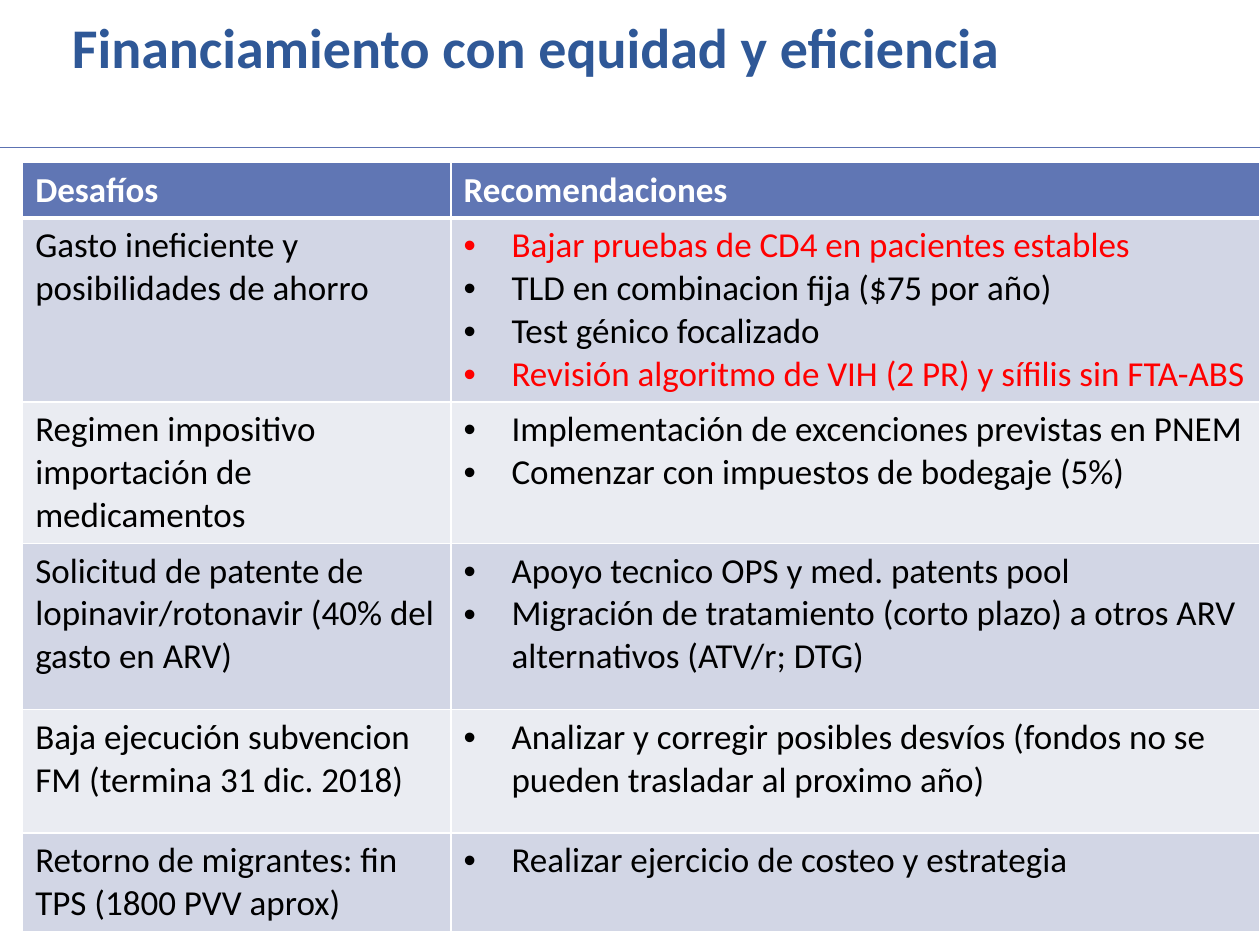
from lxml.etree import SubElement
from pptx import Presentation
from pptx.dml.color import RGBColor
from pptx.enum.shapes import MSO_CONNECTOR
from pptx.enum.text import MSO_ANCHOR, PP_ALIGN
from pptx.oxml.ns import qn
from pptx.util import Inches, Pt

COLORS = {
    "title": "2F5897", "rule": "5C72B2", "header": "6076B4",
    "band_dark": "D2D6E5", "band_light": "EAECF2",
    "white": "FFFFFF", "black": "000000", "red": "FF0000",
}
HEADERS = ["Desafíos", "Recomendaciones"]
# Each row: height, challenge, recommendations with their colour
ROWS = [
    (1.43, "Gasto ineficiente y posibilidades de ahorro", [
        ("Bajar pruebas de CD4 en pacientes estables", "red"),
        ("TLD en combinacion fija ($75 por año)", "black"),
        ("Test génico focalizado", "black"),
        ("Revisión algoritmo de VIH (2 PR) y sífilis sin FTA-ABS", "red")]),
    (1.1, "Regimen impositivo importación de medicamentos", [
        ("Implementación de excenciones previstas en PNEM", "black"),
        ("Comenzar con impuestos de bodegaje (5%)", "black")]),
    (1.32, "Solicitud de patente de lopinavir/rotonavir (40% del gasto en ARV)", [
        ("Apoyo tecnico OPS y med. patents pool", "black"),
        ("Migración de tratamiento (corto plazo) a otros ARV "
         "alternativos (ATV/r; DTG)", "black")]),
    (0.98, "Baja ejecución subvencion FM (termina 31 dic. 2018)", [
        ("Analizar y corregir posibles desvíos (fondos no se pueden "
         "trasladar al proximo año)", "black")]),
    (0.77, "Retorno de migrantes: fin TPS (1800 PVV aprox)", [
        ("Realizar ejercicio de costeo y estrategia", "black")]),
]


def add_text(paragraph, text, color, size=20, bold=False):
    run = paragraph.add_run()
    run.text = text
    run.font.name = "Calibri"
    run.font.size = Pt(size)
    run.font.bold = bold
    run.font.color.rgb = RGBColor.from_string(COLORS[color])


def format_cell(cell, fill, top=1, bottom=1):
    properties = cell._tc.get_or_add_tcPr()
    for side, width in (("L", 1), ("R", 1), ("T", top), ("B", bottom)):
        border = SubElement(properties, qn(f"a:ln{side}"), w=str(Pt(width)))
        border_fill = SubElement(border, qn("a:solidFill"))
        SubElement(border_fill, qn("a:srgbClr"), val=COLORS["white"])
    cell.fill.solid()
    cell.fill.fore_color.rgb = RGBColor.from_string(COLORS[fill])


presentation = Presentation()
presentation.slide_width = Inches(10)
presentation.slide_height = Inches(7.5)
slide = presentation.slides.add_slide(presentation.slide_layouts[5])

# Title
title = slide.shapes.title
title.left, title.top = Inches(-0.58), Inches(0.05)
title.width, title.height = Inches(9.67), Inches(0.64)
title.text_frame.vertical_anchor = MSO_ANCHOR.TOP
title_paragraph = title.text_frame.paragraphs[0]
title_paragraph.alignment = PP_ALIGN.CENTER
add_text(title_paragraph, "Financiamiento con equidad y eficiencia", "title", 32, True)

# Rule under the title
rule = slide.shapes.add_connector(
    MSO_CONNECTOR.STRAIGHT, Inches(-0.03), Inches(1.17), Inches(10.03), Inches(1.17))
rule.line.color.rgb = RGBColor.from_string(COLORS["rule"])
rule.line.width = Pt(0.75)
SubElement(rule._element.spPr, qn("a:effectLst"))

# Table grid
table = slide.shapes.add_table(
    len(ROWS) + 1, 2, Inches(0.18), Inches(1.29), Inches(9.82), Inches(6.03)).table
table.columns[0].width = Inches(3.4)
table.columns[1].width = Inches(6.42)

# Header row
table.rows[0].height = Inches(0.43)
for column, header in enumerate(HEADERS):
    cell = table.cell(0, column)
    format_cell(cell, "header", bottom=3)
    add_text(cell.text_frame.paragraphs[0], header, "white", bold=True)

# Body rows
for row, (height, challenge, recommendations) in enumerate(ROWS, start=1):
    table.rows[row].height = Inches(height)
    challenge_cell, advice_cell = table.cell(row, 0), table.cell(row, 1)
    for cell in (challenge_cell, advice_cell):
        format_cell(cell, "band_dark" if row % 2 else "band_light",
                    top=3 if row == 1 else 1)
    add_text(challenge_cell.text_frame.paragraphs[0], challenge, "black")

    for index, (text, color) in enumerate(recommendations):
        frame = advice_cell.text_frame
        paragraph = frame.add_paragraph() if index else frame.paragraphs[0]
        properties = paragraph._p.get_or_add_pPr()
        properties.set("marL", str(Inches(0.38)))
        properties.set("indent", str(Inches(-0.38)))
        SubElement(properties, qn("a:buFont"), typeface="Arial")
        SubElement(properties, qn("a:buChar"), char="•")
        add_text(paragraph, text, color)

presentation.save("out.pptx")
